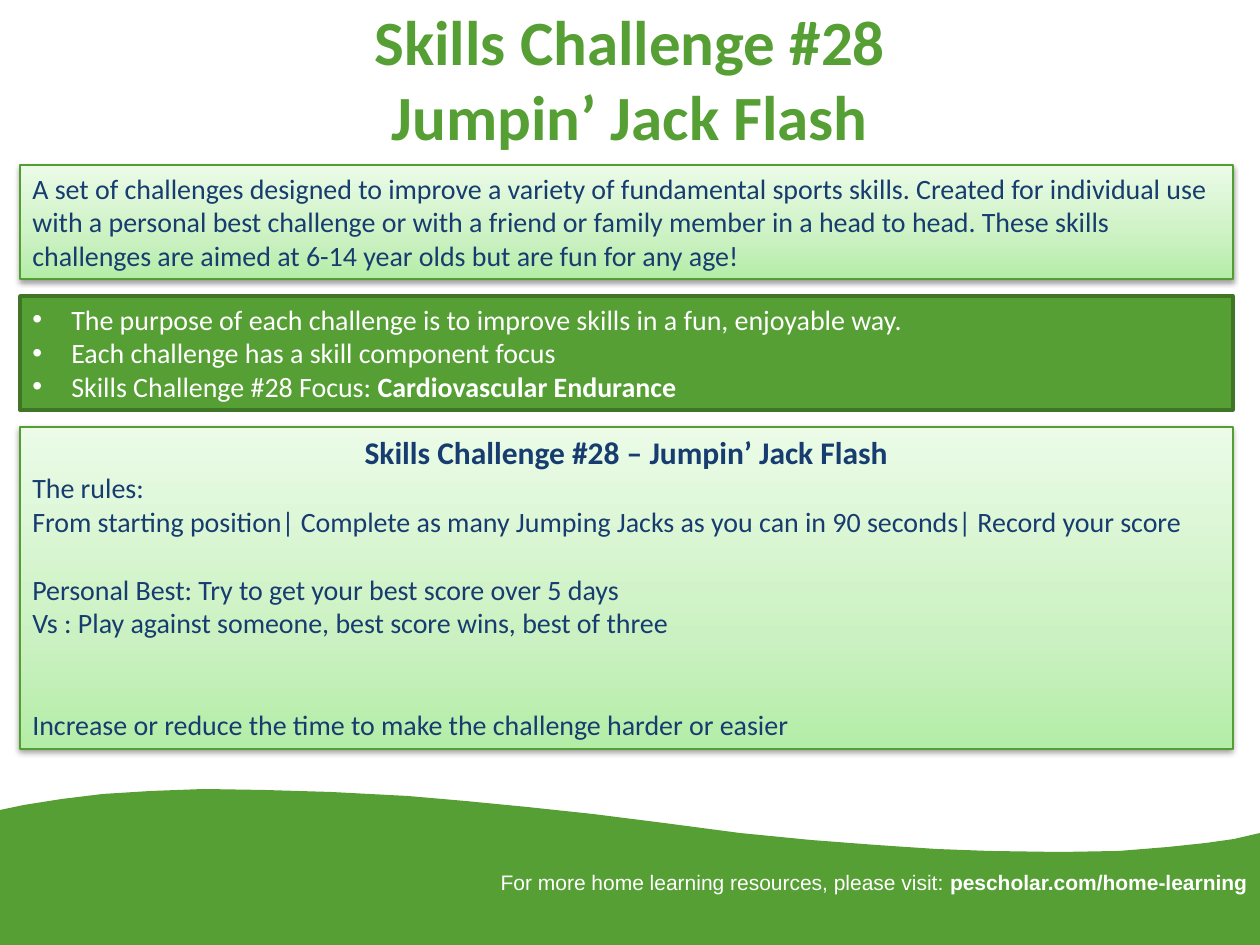
from lxml.etree import SubElement
from pptx import Presentation
from pptx.dml.color import RGBColor
from pptx.enum.shapes import MSO_SHAPE
from pptx.enum.text import MSO_ANCHOR, MSO_AUTO_SIZE, PP_ALIGN
from pptx.oxml.ns import qn
from pptx.util import Emu, Pt

PX = 914400 // 126
PAGE_WIDTH, PAGE_HEIGHT = 1260, 945

GREEN = RGBColor(0x55, 0x9F, 0x34)
DARK_GREEN = RGBColor(0x3F, 0x76, 0x26)
EDGE_GREEN = RGBColor(0x52, 0x9E, 0x30)
NAVY = RGBColor(0x17, 0x3C, 0x6F)
WHITE = RGBColor(0xFF, 0xFF, 0xFF)
BLACK = RGBColor(0, 0, 0)
PALE_STOPS = [
    (0, RGBColor(0xB4, 0xED, 0xA7)),
    (35, RGBColor(0xCB, 0xF1, 0xC2)),
    (100, RGBColor(0xEB, 0xFB, 0xE7)),
]

PANEL_LEFT, PANEL_WIDTH = 20, 1213
BLANK_LINE = 19.5

WAVE = [
    (0, 810), (24, 805), (62, 799), (103, 794), (151, 791), (204, 789),
    (265, 790), (331, 792), (408, 796), (465, 801), (527, 807), (593, 814),
    (664, 823), (740, 833), (811, 840), (876, 845), (936, 849), (989, 851),
    (1060, 852), (1119, 851), (1168, 847), (1206, 843), (1234, 839), (1260, 833),
]


class SlideBuilder:
    def __init__(self, page, font):
        self.page = page
        self.font = font

    def add_run(self, para, text, size, color, bold=False, font=None):
        span = para.add_run()
        span.text = text
        span.font.name = font or self.font
        span.font.size = Pt(size)
        span.font.color.rgb = color
        span.font.bold = bold

    def add_paragraph(self, box, spans, size, color, align=PP_ALIGN.LEFT,
                      before=0, bullet=False, font=None):
        """Add a paragraph of (text, bold) spans, reusing an empty first one."""
        frame = box.text_frame
        para = frame.paragraphs[0]
        if para.runs:
            para = frame.add_paragraph()
        para.alignment = align
        if before:
            para.space_before = Pt(before)
        if bullet:
            properties = para._p.get_or_add_pPr()
            properties.set("marL", str(39 * PX))
            properties.set("indent", str(-39 * PX))
            SubElement(properties, qn("a:buFont"), typeface="Arial")
            SubElement(properties, qn("a:buChar"), char="•")
        for text, bold in spans:
            self.add_run(para, text, size, color, bold, font)

    def title(self, lines, left, top, width, height, size, color):
        box = self.page.shapes.title
        box.left, box.top, box.width, box.height = (
            Emu(v * PX) for v in (left, top, width, height))
        frame = box.text_frame
        frame.auto_size = MSO_AUTO_SIZE.NONE
        frame.vertical_anchor = MSO_ANCHOR.MIDDLE
        para = frame.paragraphs[0]
        para.alignment = PP_ALIGN.CENTER
        for index, line in enumerate(lines):
            if index:
                para.add_line_break()
            self.add_run(para, line, size, color, bold=True)

    def wave(self, points, color):
        """Fill the area from the wavy edge down to the foot of the slide."""
        builder = self.page.shapes.build_freeform(*points[0], scale=PX)
        corners = [(PAGE_WIDTH, PAGE_HEIGHT), (0, PAGE_HEIGHT)]
        builder.add_line_segments(points[1:] + corners, close=True)
        shape = builder.convert_to_shape()
        shape.shadow.inherit = False
        shape.fill.solid()
        shape.fill.fore_color.rgb = color
        shape.line.fill.background()

    def panel(self, top, height, line_color, line_width):
        box = self.page.shapes.add_shape(
            MSO_SHAPE.RECTANGLE,
            *(Emu(v * PX) for v in (PANEL_LEFT, top, PANEL_WIDTH, height)))
        box.shadow.inherit = False
        box.line.color.rgb = line_color
        box.line.width = Pt(line_width)
        box.text_frame.word_wrap = True
        box.text_frame.vertical_anchor = MSO_ANCHOR.TOP
        return box

    def solid_panel(self, top, height):
        box = self.panel(top, height, DARK_GREEN, 2)
        box.fill.solid()
        box.fill.fore_color.rgb = GREEN
        return box

    def pale_panel(self, top, height):
        """Add a panel with a three-stop gradient and a soft shadow below."""
        box = self.panel(top, height, EDGE_GREEN, 0.75)
        box.fill.gradient()
        box.fill.gradient_angle = 90
        properties = box._element.spPr
        stops = properties.find(qn("a:gradFill")).find(qn("a:gsLst"))
        for stop in list(stops):
            stops.remove(stop)
        for position, color in PALE_STOPS:
            stop = SubElement(stops, qn("a:gs"), pos=str(position * 1000))
            SubElement(stop, qn("a:srgbClr"), val=str(color))
        shadow = SubElement(
            properties.find(qn("a:effectLst")), qn("a:outerShdw"),
            blurRad=str(Pt(3.1)), dist=str(Pt(1.6)), dir="5400000", rotWithShape="0")
        shade = SubElement(shadow, qn("a:srgbClr"), val=str(BLACK))
        SubElement(shade, qn("a:alpha"), val="38000")
        return box

    def text_box(self, left, top, width, height):
        box = self.page.shapes.add_textbox(
            *(Emu(v * PX) for v in (left, top, width, height)))
        box.text_frame.word_wrap = True
        return box


def main():
    deck = Presentation()
    deck.slide_width = Emu(PAGE_WIDTH * PX)
    deck.slide_height = Emu(PAGE_HEIGHT * PX)
    slide = SlideBuilder(deck.slides.add_slide(deck.slide_layouts[5]), "Calibri")

    slide.wave(WAVE, GREEN)
    slide.title(["Skills Challenge #28", "Jumpin’ Jack Flash"],
                63, -1, 1134, 158, 36, GREEN)

    intro = slide.pale_panel(165, 114)
    slide.add_paragraph(intro, [(
        "A set of challenges designed to improve a variety of fundamental sports "
        "skills. Created for individual use with a personal best challenge or with "
        "a friend or family member in a head to head. These skills challenges are "
        "aimed at 6-14 year olds but are fun for any age!", False)], 16, NAVY)

    purpose = slide.solid_panel(296, 114)
    for spans in [
        [("The purpose of each challenge is to improve skills in a fun, "
          "enjoyable way.", False)],
        [("Each challenge has a skill component focus", False)],
        [("Skills Challenge #28 Focus: ", False), ("Cardiovascular Endurance", True)],
    ]:
        slide.add_paragraph(purpose, spans, 16, WHITE, bullet=True)

    rules = slide.pale_panel(427, 322)
    slide.add_paragraph(rules, [("Skills Challenge #28 – Jumpin’ Jack Flash", True)],
                        18, NAVY, PP_ALIGN.CENTER)
    for text, blank_lines in [
        ("The rules:", 0),
        ("From starting position| Complete as many Jumping Jacks as you can in "
         "90 seconds| Record your score", 0),
        ("Personal Best: Try to get your best score over 5 days", 1),
        ("Vs : Play against someone, best score wins, best of three", 0),
        ("Increase or reduce the time to make the challenge harder or easier", 2),
    ]:
        slide.add_paragraph(rules, [(text, False)], 16, NAVY,
                            before=blank_lines * BLANK_LINE)

    footer = slide.text_box(427, 863, 833, 38)
    slide.add_paragraph(footer, [
        ("For more home learning resources, please visit: ", False),
        ("pescholar.com/home-learning", True),
    ], 12, WHITE, PP_ALIGN.RIGHT, font="Arial")

    deck.save("out.pptx")


if __name__ == "__main__":
    main()
